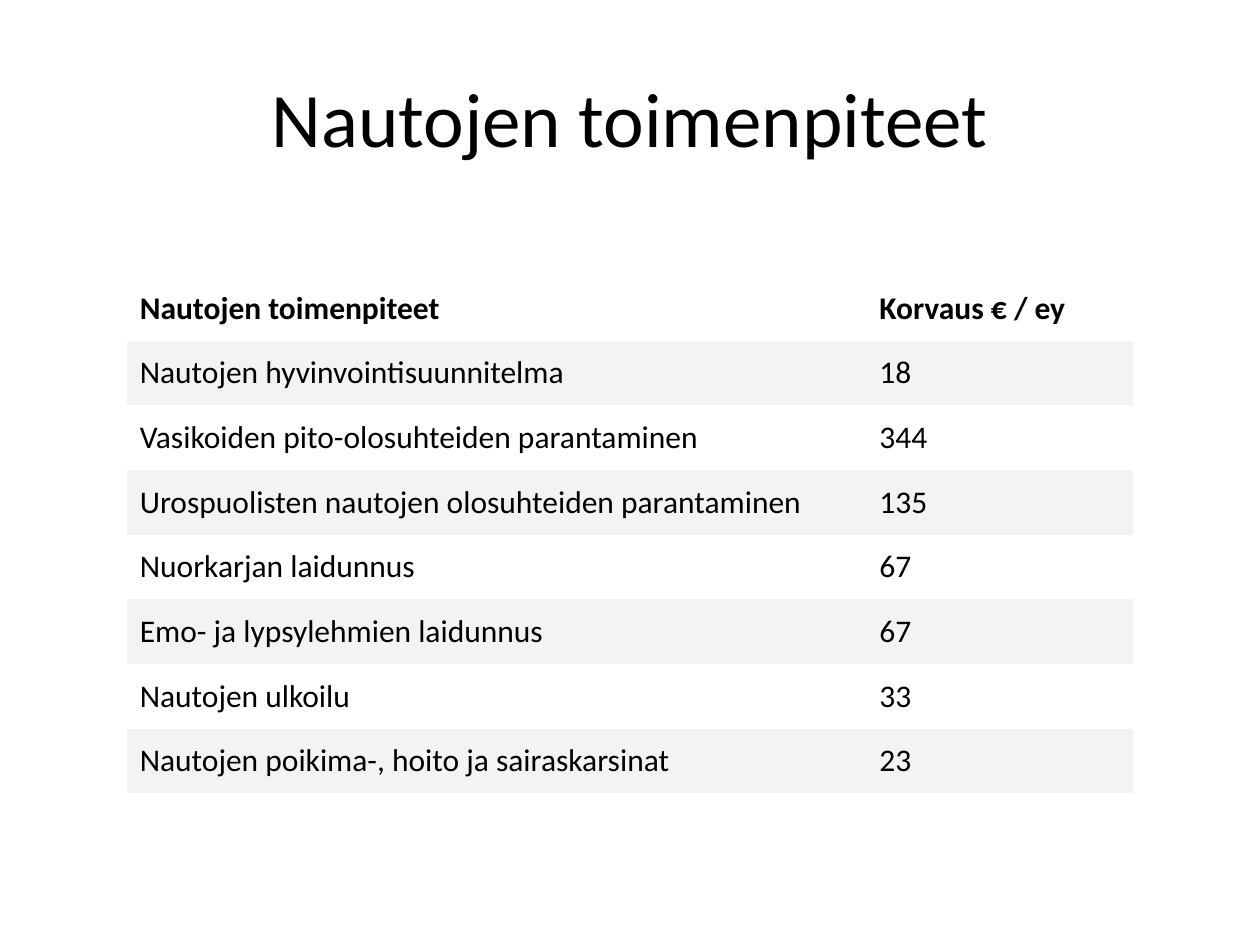
from pptx import Presentation
from pptx.dml.color import RGBColor
from pptx.enum.text import MSO_ANCHOR, PP_ALIGN
from pptx.oxml.ns import qn
from pptx.util import Inches, Pt

BLACK = RGBColor(0x00, 0x00, 0x00)
WHITE = RGBColor(0xFF, 0xFF, 0xFF)
BAND = RGBColor(0xF4, 0xF3, 0xF2)
FONT = "Calibri"
NO_STYLE_NO_GRID = "{2D5ABB26-0587-4C30-8999-92F81FD0307C}"
TITLE = "Nautojen toimenpiteet"
COLUMN_WIDTHS = (5.87, 2.11)
MEASURES = (
    ("Nautojen toimenpiteet", "Korvaus € / ey"),
    ("Nautojen hyvinvointisuunnitelma", "18"),
    ("Vasikoiden pito-olosuhteiden parantaminen", "344"),
    ("Urospuolisten nautojen olosuhteiden parantaminen", "135"),
    ("Nuorkarjan laidunnus", "67"),
    ("Emo- ja lypsylehmien laidunnus", "67"),
    ("Nautojen ulkoilu", "33"),
    ("Nautojen poikima-, hoito ja sairaskarsinat", "23"),
)


def add_span(para, text, size, bold=False):
    """Add one formatted run to a paragraph."""
    span = para.add_run()
    span.text = text
    span.font.name = FONT
    span.font.size = Pt(size)
    span.font.bold = bold
    span.font.color.rgb = BLACK


def place_title(page, left, top, width, height):
    """Place the centred heading in its box."""
    box = page.shapes.title
    box.left, box.top = Inches(left), Inches(top)
    box.width, box.height = Inches(width), Inches(height)
    box.text_frame.vertical_anchor = MSO_ANCHOR.MIDDLE
    para = box.text_frame.paragraphs[0]
    para.alignment = PP_ALIGN.CENTER
    add_span(para, TITLE, 44)


def fill_cell(cell, text, color, bold):
    """Write the text of a table cell and set its look."""
    cell.fill.solid()
    cell.fill.fore_color.rgb = color
    cell.vertical_anchor = MSO_ANCHOR.MIDDLE
    cell.margin_left = cell.margin_right = Inches(0.1)
    cell.margin_top = cell.margin_bottom = Inches(0.1)
    add_span(cell.text_frame.paragraphs[0], text, 18, bold)


def place_measures(page, left, top, width, height):
    """Place the banded table of measures and compensations in its box."""
    frame = page.shapes.add_table(
        len(MEASURES), len(COLUMN_WIDTHS),
        Inches(left), Inches(top), Inches(width), Inches(height))
    table = frame.table
    table._tbl.tblPr.find(qn("a:tableStyleId")).text = NO_STYLE_NO_GRID
    for column, column_width in zip(table.columns, COLUMN_WIDTHS):
        column.width = Inches(column_width)
    for row_index, measure in enumerate(MEASURES):
        color = BAND if row_index % 2 else WHITE
        for column_index, text in enumerate(measure):
            fill_cell(table.cell(row_index, column_index), text, color, row_index == 0)


def main():
    """Build the slide and save the deck."""
    deck = Presentation()
    deck.slide_width, deck.slide_height = Inches(10), Inches(7.5)
    page = deck.slides.add_slide(deck.slide_layouts.get_by_name("Title Only"))
    place_title(page, 0.5, 0.3, 9, 1.25)
    place_measures(page, 1.01, 2.19, sum(COLUMN_WIDTHS), 4.11)
    deck.save("out.pptx")


if __name__ == "__main__":
    main()
